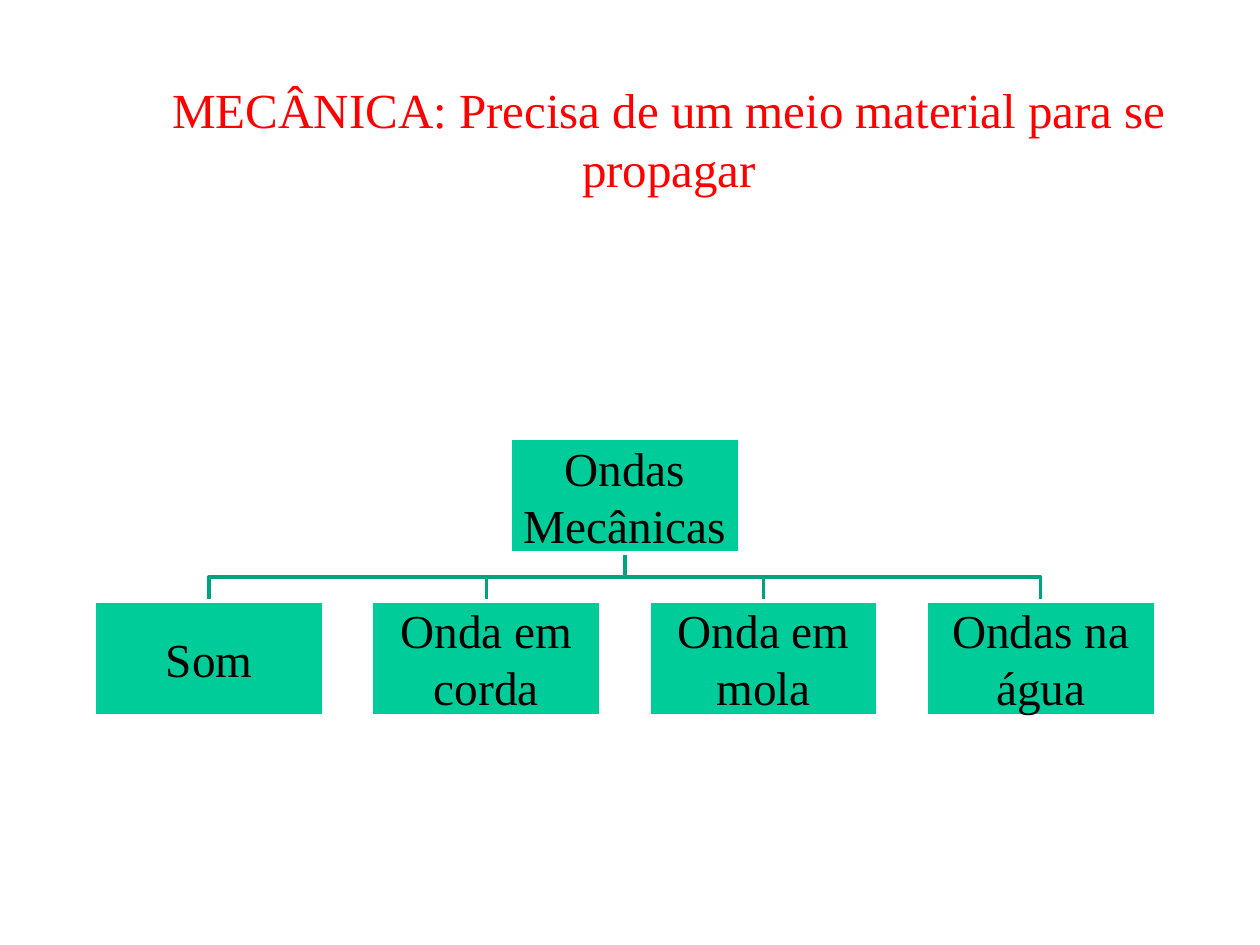
from pptx import Presentation
from pptx.dml.color import RGBColor
from pptx.enum.shapes import MSO_SHAPE
from pptx.enum.text import MSO_ANCHOR, MSO_AUTO_SIZE, PP_ALIGN
from pptx.util import Inches, Pt


def color(code):
    return RGBColor.from_string(code)


def write(frame, text, size=27, ink="000000", anchor=MSO_ANCHOR.MIDDLE, inset=None):
    frame.word_wrap = True
    frame.auto_size = MSO_AUTO_SIZE.NONE
    frame.vertical_anchor = anchor
    if inset is not None:
        frame.margin_left = frame.margin_right = Inches(inset)
        frame.margin_top = frame.margin_bottom = Inches(inset)
    par = frame.paragraphs[0]
    par.alignment = PP_ALIGN.CENTER
    run = par.add_run()
    run.text = text
    run.font.name = "Times New Roman"
    run.font.size = Pt(size)
    run.font.color.rgb = color(ink)


class Deck:
    """Holds the style and the current slide."""

    fill, edge, link = "00CC99", "FFFFFF", "00A37B"
    wide, high, line = 1.82, 0.91, 2

    def __init__(self):
        self.show = Presentation()
        self.show.slide_width, self.show.slide_height = Inches(10), Inches(7.5)
        self.slide = self.show.slides.add_slide(self.show.slide_layouts[5])

    def title(self, text, left, top, width, height):
        shape = self.slide.shapes.title
        shape.left, shape.top = Inches(left), Inches(top)
        shape.width, shape.height = Inches(width), Inches(height)
        write(shape.text_frame, text, size=28, ink="FF0000", anchor=MSO_ANCHOR.TOP)

    def box(self, text, mid, top):
        shape = self.slide.shapes.add_shape(
            MSO_SHAPE.RECTANGLE, Inches(mid - self.wide / 2), Inches(top),
            Inches(self.wide), Inches(self.high))
        shape.shadow.inherit = False
        shape.fill.solid()
        shape.fill.fore_color.rgb = color(self.fill)
        shape.line.color.rgb = color(self.edge)
        shape.line.width = Pt(self.line)
        write(shape.text_frame, text, inset=0.02)

    def elbow(self, start, end, top, base):
        bend = (top + base) / 2
        pen = self.slide.shapes.build_freeform(Inches(start), Inches(top))
        pen.add_line_segments(
            [(Inches(x), Inches(y)) for x, y in
             ((start, bend), (end, bend), (end, base))], close=False)
        shape = pen.convert_to_shape()
        shape.shadow.inherit = False
        shape.fill.background()
        shape.line.color.rgb = color(self.link)
        shape.line.width = Pt(self.line)

    def tree(self, root, leaves, mid, top, step, drop):
        first = mid - step * (len(leaves) - 1) / 2
        spots = [first + step * i for i in range(len(leaves))]
        for spot in reversed(spots):
            self.elbow(mid, spot, top + self.high, top + drop)
        self.box(root, mid, top)
        for leaf, spot in zip(leaves, spots):
            self.box(leaf, spot, top + drop)


def main():
    deck = Deck()
    deck.title("MECÂNICA: Precisa de um meio material para se propagar",
               0.98, 0.58, 8.66, 1.04)
    deck.tree("Ondas Mecânicas",
              ["Som", "Onda em corda", "Onda em mola", "Ondas na água"],
              mid=4.96, top=3.48, step=2.2, drop=1.29)
    deck.show.save("out.pptx")


if __name__ == "__main__":
    main()
